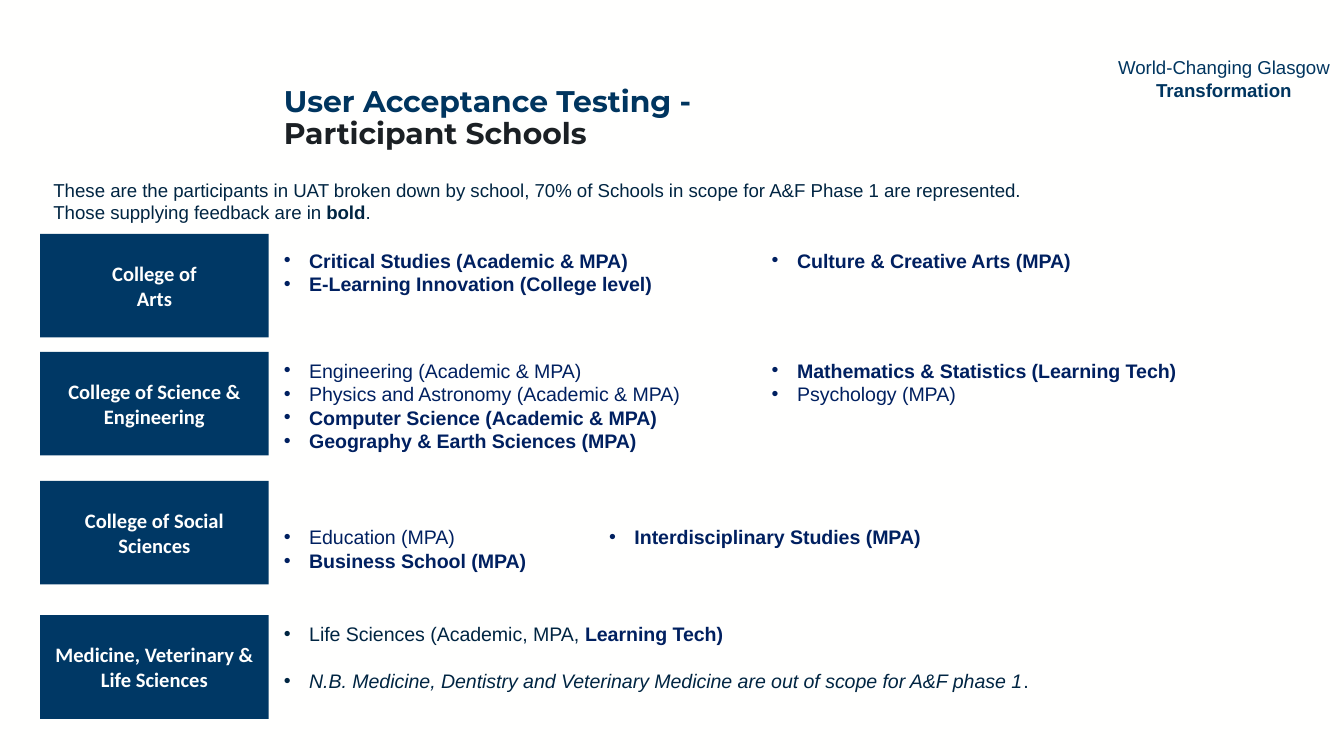
from dataclasses import dataclass

from lxml import etree
from pptx import Presentation
from pptx.dml.color import RGBColor
from pptx.enum.shapes import MSO_SHAPE
from pptx.enum.text import MSO_ANCHOR, MSO_AUTO_SIZE, PP_ALIGN
from pptx.oxml.ns import qn
from pptx.util import Cm, Pt

RECTANGLE = MSO_SHAPE.RECTANGLE
TOP, MIDDLE = MSO_ANCHOR.TOP, MSO_ANCHOR.MIDDLE
LEFT, CENTER = PP_ALIGN.LEFT, PP_ALIGN.CENTER
NO_FIT = MSO_AUTO_SIZE.NONE


@dataclass(frozen=True)
class Theme:
    """Colours, fonts and type sizes of the deck."""
    paper: str = "FFFFFE"
    brand: str = "00355F"
    panel: str = "003865"
    ink: str = "002542"
    navy: str = "002060"
    dark: str = "1B2024"
    body_font: str = "Arial"
    label_font: str = "Calibri"
    title_font: str = "Montserrat"
    small: float = 10
    item: float = 10.5
    label: float = 11
    title: float = 16
    title_gap: float = 20


@dataclass(frozen=True)
class Span:
    """A stretch of text in one style."""
    text: str
    color: str
    bold: bool = False
    italic: bool = False
    size: float = Theme.item
    font: str = Theme.body_font


@dataclass(frozen=True)
class College:
    """A labelled row with its list of schools."""
    label: tuple
    top: float
    list_top: float
    list_height: float
    columns: int
    items: tuple
    gap: float = 0


def school(text, bold=False):
    """Return the spans of a school, bold if it supplies feedback."""
    return (Span(text, Theme.navy, bold),)


COLLEGES = (
    College(("College of", "Arts"), 4.42, 4.57, 1.27, 2, (
        school("Critical Studies (Academic & MPA)", True),
        school("E-Learning Innovation (College level)", True),
        school("Culture & Creative Arts (MPA)", True))),
    College(("College of Science & Engineering",), 6.65, 6.65, 2.16, 2, (
        school("Engineering (Academic & MPA)"),
        school("Physics and Astronomy (Academic & MPA)"),
        school("Computer Science (Academic & MPA)", True),
        school("Geography & Earth Sciences (MPA)", True),
        school("Mathematics & Statistics (Learning Tech)", True),
        school("Psychology (MPA)"))),
    College(("College of Social Sciences",), 9.09, 9.8, 1.27, 3, (
        school("Education (MPA)"),
        school("Business School (MPA)", True),
        school("Interdisciplinary Studies (MPA)", True))),
    College(("Medicine, Veterinary & Life Sciences",), 11.63, 11.63, 1.6, 1, (
        (Span("Life Sciences (Academic, MPA, ", Theme.ink),
         Span("Learning Tech)", Theme.navy, True)),
        (Span("N.B. Medicine, Dentistry and Veterinary Medicine are out of "
              "scope for A&F phase 1", Theme.ink, italic=True),
         Span(".", Theme.ink))), 12.5),
)


def add_spans(para, spans):
    """Add styled runs to a paragraph."""
    for span in spans:
        run = para.add_run()
        run.text = span.text
        font = run.font
        font.name, font.size = span.font, Pt(span.size)
        font.bold, font.italic = span.bold, span.italic
        font.color.rgb = RGBColor.from_string(span.color)


def place(shape, left, top, width, height):
    """Move and size a shape, in centimetres."""
    shape.left, shape.top = Cm(left), Cm(top)
    shape.width, shape.height = Cm(width), Cm(height)


def set_bullet(para):
    """Give a paragraph a hanging bullet."""
    properties = para._p.get_or_add_pPr()
    indent = Cm(0.48)
    properties.set("marL", str(indent))
    properties.set("indent", str(-indent))
    etree.SubElement(properties, qn("a:buFont"), typeface="Arial")
    etree.SubElement(properties, qn("a:buChar"), char="•")


def fill_frame(frame, lines, align=LEFT, anchor=TOP, bulleted=False, gap=0):
    """Write lines of spans into a text frame."""
    frame.word_wrap = True
    frame.auto_size = NO_FIT
    frame.vertical_anchor = anchor
    for index, spans in enumerate(lines):
        para = frame.add_paragraph() if index else frame.paragraphs[0]
        para.alignment = align
        para.space_before = Pt(gap if index else 0)
        if bulleted:
            set_bullet(para)
        add_spans(para, spans)


def fill_title(title):
    """Write the two-tone title on two lines."""
    place(title, 5.11, 1.35, 15.82, 1.8)
    style = {"bold": True, "size": Theme.title, "font": Theme.title_font}
    first = (Span("User Acceptance Testing -", Theme.brand, **style),)
    fill_frame(title.text_frame, [first], anchor=MIDDLE)
    para = title.text_frame.paragraphs[0]
    para.line_spacing = 0.9
    para.add_line_break()
    etree.SubElement(para._p[-1], qn("a:rPr"), sz=str(Theme.title_gap * 100))
    add_spans(para, (Span("Participant Schools", Theme.dark, **style),))


def add_text(slide, position, lines, align=LEFT):
    """Add a plain text box."""
    box = slide.shapes.add_textbox(0, 0, 0, 0)
    place(box, *position)
    fill_frame(box.text_frame, lines, align)


def add_label(slide, college):
    """Add the filled panel that names a college."""
    panel = slide.shapes.add_shape(RECTANGLE, 0, 0, 0, 0)
    place(panel, 0.76, college.top, 4.32, 1.96)
    panel.shadow.inherit = False
    panel.fill.solid()
    panel.fill.fore_color.rgb = RGBColor.from_string(Theme.panel)
    panel.line.fill.background()
    frame = panel.text_frame
    frame.margin_left = frame.margin_right = Cm(0.18)
    frame.margin_top = frame.margin_bottom = Cm(0.1)
    lines = [(Span(text, Theme.paper, True, size=Theme.label,
                   font=Theme.label_font),) for text in college.label]
    fill_frame(frame, lines, CENTER, MIDDLE)


def fill_list(body, college):
    """Write a college's schools into a body placeholder."""
    place(body, 5.11, college.list_top, 18.95, college.list_height)
    fill_frame(body.text_frame, college.items, bulleted=True, gap=college.gap)
    body.text_frame._txBody.bodyPr.set("numCol", str(college.columns))


def main():
    """Build and save the deck."""
    deck = Presentation()
    deck.slide_width, deck.slide_height = Cm(25.4), Cm(14.29)
    page = deck.slides.add_slide(deck.slide_layouts.get_by_name("Comparison"))
    page.background.fill.solid()
    page.background.fill.fore_color.rgb = RGBColor.from_string(Theme.paper)
    title, *bodies = page.placeholders
    fill_title(title)
    add_text(page, (20.78, 0.94, 4.7, 1.12), [
        (Span("World-Changing Glasgow ", Theme.brand, size=Theme.small),
         Span("Transformation", Theme.brand, True, size=Theme.small))], CENTER)
    add_text(page, (0.76, 3.25, 23.5, 1.14), [
        (Span("These are the participants in UAT broken down by school, 70% of "
              "Schools in scope for A&F Phase 1 are represented.", Theme.ink,
              size=Theme.small),),
        (Span("Those supplying feedback are in ", Theme.ink, size=Theme.small),
         Span("bold", Theme.ink, True, size=Theme.small),
         Span(".", Theme.ink, size=Theme.small))])
    for body, college in zip(bodies, COLLEGES):
        add_label(page, college)
        fill_list(body, college)
    deck.save("out.pptx")


if __name__ == "__main__":
    main()
